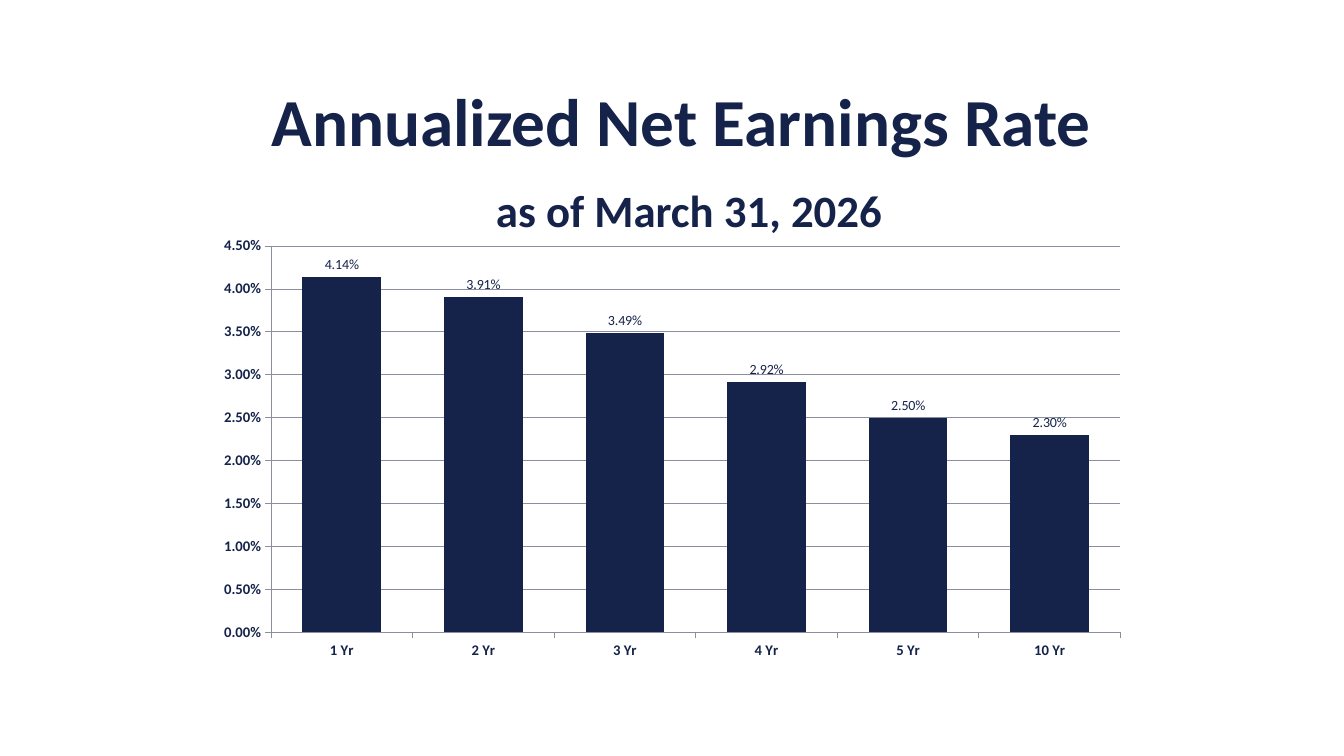
"""Build a slide with a column chart of annualized net earnings rates."""
from lxml import etree
from pptx import Presentation
from pptx.chart.data import CategoryChartData
from pptx.dml.color import RGBColor
from pptx.enum.chart import XL_CHART_TYPE, XL_LABEL_POSITION, XL_TICK_MARK
from pptx.enum.text import PP_ALIGN
from pptx.oxml.ns import qn
from pptx.util import Inches, Pt

COLUMN = XL_CHART_TYPE.COLUMN_CLUSTERED
OUTSIDE_END = XL_LABEL_POSITION.OUTSIDE_END
TICK_OUT, TICK_NONE = XL_TICK_MARK.OUTSIDE, XL_TICK_MARK.NONE
CENTER = PP_ALIGN.CENTER

THEME = {
    "font": "Calibri",
    "title": RGBColor.from_string("152249"),
    "navy": RGBColor.from_string("15234A"),
    "grid": RGBColor.from_string("8A8E9E"),
    "title_size": Pt(48),
    "date_size": Pt(32),
    "axis_size": Pt(10.5),
    "label_size": Pt(10),
    "chart_size": Pt(18),
}
RATES = {"1 Yr": 0.0414, "2 Yr": 0.0391, "3 Yr": 0.0349,
         "4 Yr": 0.0292, "5 Yr": 0.025, "10 Yr": 0.023}
PLOT = {"layoutTarget": "inner", "xMode": "edge", "yMode": "edge",
        "x": 0.065, "y": 0.031, "w": 0.931, "h": 0.833}


def style_font(font, size, color, bold):
    """Apply the theme font with the given size, colour and weight."""
    for name, value in {"name": THEME["font"], "size": size, "bold": bold}.items():
        setattr(font, name, value)
    font.color.rgb = color


prs = Presentation()
prs.slide_width, prs.slide_height = Inches(13.33), Inches(7.5)
s = prs.slides.add_slide(prs.slide_layouts[6])

title = s.shapes.add_textbox(Inches(2.38), Inches(0.74), Inches(8.76), Inches(1.72))
tf = title.text_frame
tf.word_wrap = True
p = tf.paragraphs[0]
p.alignment = CENTER
for i, (text, size) in enumerate([
    ("Annualized Net Earnings Rate", THEME["title_size"]),
    (" ", THEME["title_size"]),
    ("as of March 31, 2026", THEME["date_size"]),
]):
    if i == 1:
        p.add_line_break()
    r = p.add_run()
    r.text = text
    style_font(r.font, size, THEME["title"], True)

data = CategoryChartData(number_format="0.00%")
data.categories = list(RATES)
data.add_series("Series 1", list(RATES.values()))
chart = s.shapes.add_chart(COLUMN, Inches(2.1), Inches(2.3),
                           Inches(9.05), Inches(4.6), data).chart
chart.has_legend = False
chart.has_title = False
style_font(chart.font, THEME["chart_size"], THEME["navy"], False)

plot_area = chart.plots[0]
plot_area.gap_width = 80
plot_area.vary_by_categories = False
fill = plot_area.series[0].format.fill
fill.solid()
fill.fore_color.rgb = THEME["navy"]

plot_area.has_data_labels = True
labels = plot_area.data_labels
for name, value in {"show_value": True, "position": OUTSIDE_END,
                    "number_format": "0.00%",
                    "number_format_is_linked": False}.items():
    setattr(labels, name, value)
style_font(labels.font, THEME["label_size"], THEME["navy"], False)

rate_axis = chart.value_axis
for name, value in {"minimum_scale": 0, "maximum_scale": 0.045,
                    "major_unit": 0.005, "has_major_gridlines": True}.items():
    setattr(rate_axis, name, value)
for axis, number_format in ((chart.category_axis, "@"), (rate_axis, "0.00%")):
    axis.major_tick_mark = TICK_OUT
    axis.minor_tick_mark = TICK_NONE
    axis.tick_labels.number_format = number_format
    axis.tick_labels.number_format_is_linked = False
    style_font(axis.tick_labels.font, THEME["axis_size"], THEME["navy"], True)
for part in (chart.category_axis, rate_axis, rate_axis.major_gridlines):
    part.format.line.color.rgb = THEME["grid"]
    part.format.line.width = Pt(0.75)

plot_xml = chart.element.find(".//" + qn("c:plotArea"))
for old in plot_xml.findall(qn("c:layout")):
    plot_xml.remove(old)
layout = etree.Element(qn("c:layout"))
plot_xml.insert(0, layout)
manual = etree.SubElement(layout, qn("c:manualLayout"))
for tag, value in PLOT.items():
    etree.SubElement(manual, qn("c:" + tag)).set("val", str(value))

prs.save("out.pptx")
